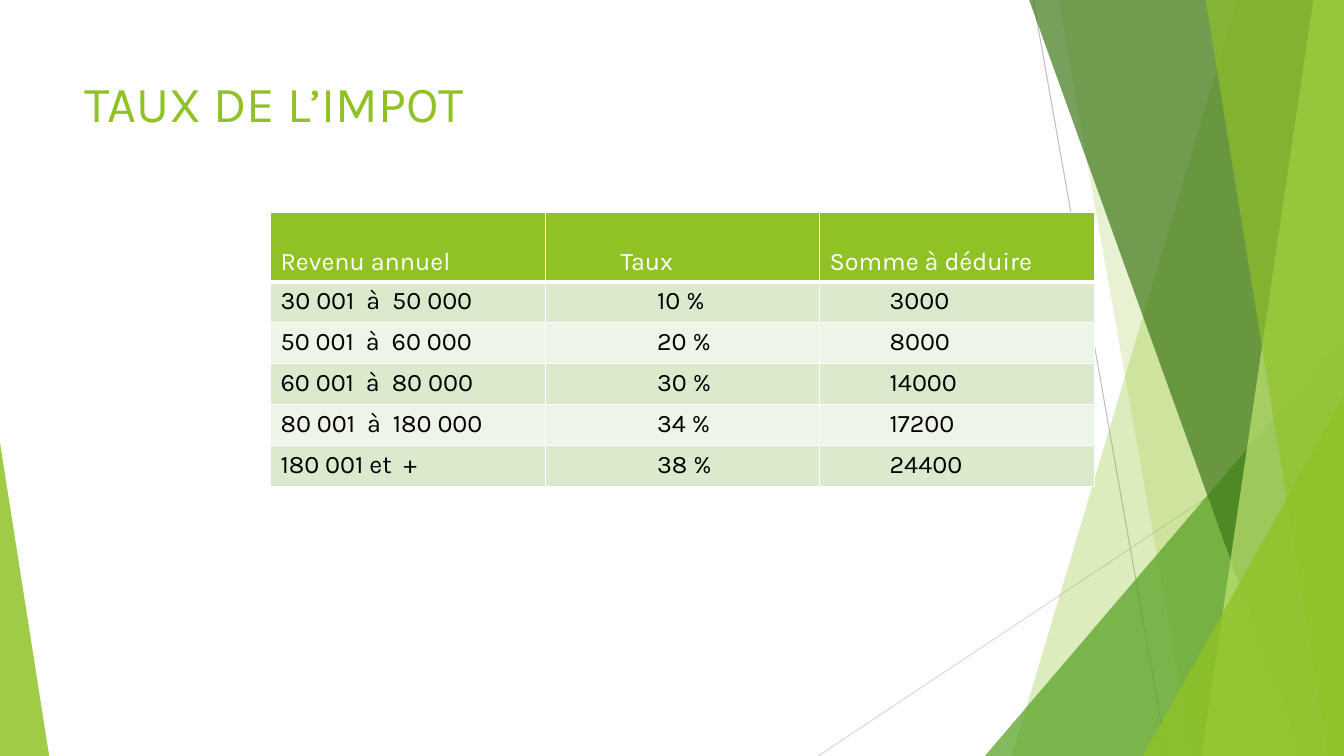
import pptx
import pptx.dml.color
import pptx.enum.shapes
import pptx.enum.text
import pptx.oxml.ns
import pptx.util
from lxml import etree

Cm = pptx.util.Cm
Pt = pptx.util.Pt
RGBColor = pptx.dml.color.RGBColor
qn = pptx.oxml.ns.qn

LIME = RGBColor(0x90, 0xC2, 0x26)
PALE_LIME = RGBColor(0xC0, 0xE4, 0x74)
GREEN = RGBColor(0x54, 0xA0, 0x21)
DARK_GREEN = RGBColor(0x3F, 0x78, 0x19)
BAND_DARK = RGBColor(0xDB, 0xE9, 0xCD)
BAND_LIGHT = RGBColor(0xEE, 0xF4, 0xE8)
GREY = RGBColor(0xBF, 0xBF, 0xBF)
LIGHT_GREY = RGBColor(0xD9, 0xD9, 0xD9)
WHITE = RGBColor(0xFF, 0xFF, 0xFF)
BLACK = RGBColor(0x00, 0x00, 0x00)

SLIDE_WIDTH, SLIDE_HEIGHT = 33.87, 19.05
SHARD_TOP = -0.02
COLUMN_WIDTH = 6.92
HEADER_HEIGHT, ROW_HEIGHT = 1.74, 1.03
HEADER_INDENTS = (0.25, 1.9, 0.25)
BODY_INDENTS = (0.25, 2.82, 1.76)

TAX_TABLE = [
    ("Revenu annuel", "Taux", "Somme à déduire"),
    ("30 001  à  50 000", "10 %", "3000"),
    ("50 001  à  60 000", "20 %", "8000"),
    ("60 001  à  80 000", "30 %", "14000"),
    ("80 001  à  180 000", "34 %", "17200"),
    ("180 001 et  +", "38 %", "24400"),
]


class SlideBuilder:
    font_name = "Karla"

    def __init__(self, slide):
        self.slide = slide
        self.shapes = slide.shapes

    def style_paragraph(self, paragraph, size, color):
        paragraph.font.name = self.font_name
        paragraph.font.size = Pt(size)
        paragraph.font.bold = False
        paragraph.font.color.rgb = color

    def paint(self, shape, color, opacity):
        """Fill a shape with a see-through colour; opacity is in percent."""
        shape.shadow.inherit = False
        shape.line.fill.background()
        shape.fill.solid()
        shape.fill.fore_color.rgb = color
        color_element = shape.fill._xPr.find(qn("a:solidFill"))[0]
        etree.SubElement(color_element, qn("a:alpha"), val=str(opacity * 1000))

    def line(self, start, end, color):
        connector = self.shapes.add_connector(
            pptx.enum.shapes.MSO_CONNECTOR.STRAIGHT, *map(Cm, start + end))
        connector.line.color.rgb = color
        connector.line.width = Pt(0.75)
        etree.SubElement(connector._element.spPr, qn("a:effectLst"))

    def shard(self, top_left, bottom_left, color, opacity):
        """Draw a facet with a slanted left side, reaching the right slide edge."""
        top_right = min(SLIDE_WIDTH, SLIDE_WIDTH)
        corners = [(top_right, SHARD_TOP), (SLIDE_WIDTH, SLIDE_HEIGHT),
                   (bottom_left, SLIDE_HEIGHT)]
        builder = self.shapes.build_freeform(Cm(top_left), Cm(SHARD_TOP))
        builder.add_line_segments([(Cm(x), Cm(y)) for x, y in corners], close=True)
        self.paint(builder.convert_to_shape(), color, opacity)

    def corner_triangle(self, left, top, width, apex, color, opacity):
        """Draw a triangle on the bottom edge; apex runs from 0 (left) to 1 (right)."""
        shape = self.shapes.add_shape(
            pptx.enum.shapes.MSO_SHAPE.ISOSCELES_TRIANGLE,
            Cm(left), Cm(top), Cm(width), Cm(SLIDE_HEIGHT - top))
        shape.adjustments[0] = apex
        self.paint(shape, color, opacity)

    def title(self, text, left, top, width, height):
        text_frame = self.shapes.add_textbox(
            Cm(left), Cm(top), Cm(width), Cm(height)).text_frame
        text_frame.word_wrap = True
        text_frame.vertical_anchor = pptx.enum.text.MSO_ANCHOR.TOP
        text_frame.text = text
        self.style_paragraph(text_frame.paragraphs[0], 36, LIME)

    def cell_borders(self, cell, bottom_width):
        properties = cell._tc.get_or_add_tcPr()
        widths = {"lnL": 1, "lnR": 1, "lnT": 1, "lnB": bottom_width}
        for position, (side, width) in enumerate(widths.items()):
            border = etree.Element(qn(f"a:{side}"), w=str(Pt(width)))
            fill = etree.SubElement(border, qn("a:solidFill"))
            etree.SubElement(fill, qn("a:srgbClr"), val=str(WHITE))
            properties.insert(position, border)

    def table(self, rows, left, top):
        height = HEADER_HEIGHT + ROW_HEIGHT * (len(rows) - 1)
        table = self.shapes.add_table(
            len(rows), len(rows[0]), Cm(left), Cm(top),
            Cm(COLUMN_WIDTH * len(rows[0])), Cm(height)).table
        for column in table.columns:
            column.width = Cm(COLUMN_WIDTH)
        for row_index, texts in enumerate(rows):
            is_header = row_index == 0
            table.rows[row_index].height = Cm(HEADER_HEIGHT if is_header else ROW_HEIGHT)
            band = BAND_DARK if row_index % 2 else BAND_LIGHT
            indents = HEADER_INDENTS if is_header else BODY_INDENTS
            for column_index, text in enumerate(texts):
                cell = table.cell(row_index, column_index)
                cell.text = text
                cell.margin_left = Cm(indents[column_index])
                cell.vertical_anchor = (pptx.enum.text.MSO_ANCHOR.BOTTOM if is_header
                                        else pptx.enum.text.MSO_ANCHOR.TOP)
                cell.fill.solid()
                cell.fill.fore_color.rgb = LIME if is_header else band
                self.cell_borders(cell, 3 if is_header else 1)
                self.style_paragraph(cell.text_frame.paragraphs[0], 18,
                                     WHITE if is_header else BLACK)


def main():
    presentation = pptx.Presentation()
    presentation.slide_width = Cm(SLIDE_WIDTH)
    presentation.slide_height = Cm(SLIDE_HEIGHT)
    builder = SlideBuilder(presentation.slides.add_slide(presentation.slide_layouts[6]))

    builder.line((26.04, 0), (29.41, SLIDE_HEIGHT), GREY)
    builder.line((SLIDE_WIDTH, 10.24), (20.62, SLIDE_HEIGHT), LIGHT_GREY)
    builder.shard(31.19, 25.5, LIME, 30)
    builder.shard(26.67, 30.05, LIME, 20)
    builder.corner_triangle(24.82, 8.46, 9.05, 1, GREEN, 72)
    builder.shard(25.93, 32.79, DARK_GREEN, 70)
    builder.shard(33.1, 30.28, PALE_LIME, 70)
    builder.shard(30.38, 33.48, LIME, 65)
    builder.corner_triangle(28.8, 9.98, 5.07, 1, LIME, 80)
    builder.corner_triangle(0, 11.15, 1.24, 0, LIME, 85)

    builder.title("TAUX DE L’IMPOT", 1.88, 1.7, 23.88, 3.66)
    builder.table(TAX_TABLE, 6.82, 5.36)
    presentation.save("out.pptx")


if __name__ == "__main__":
    main()
